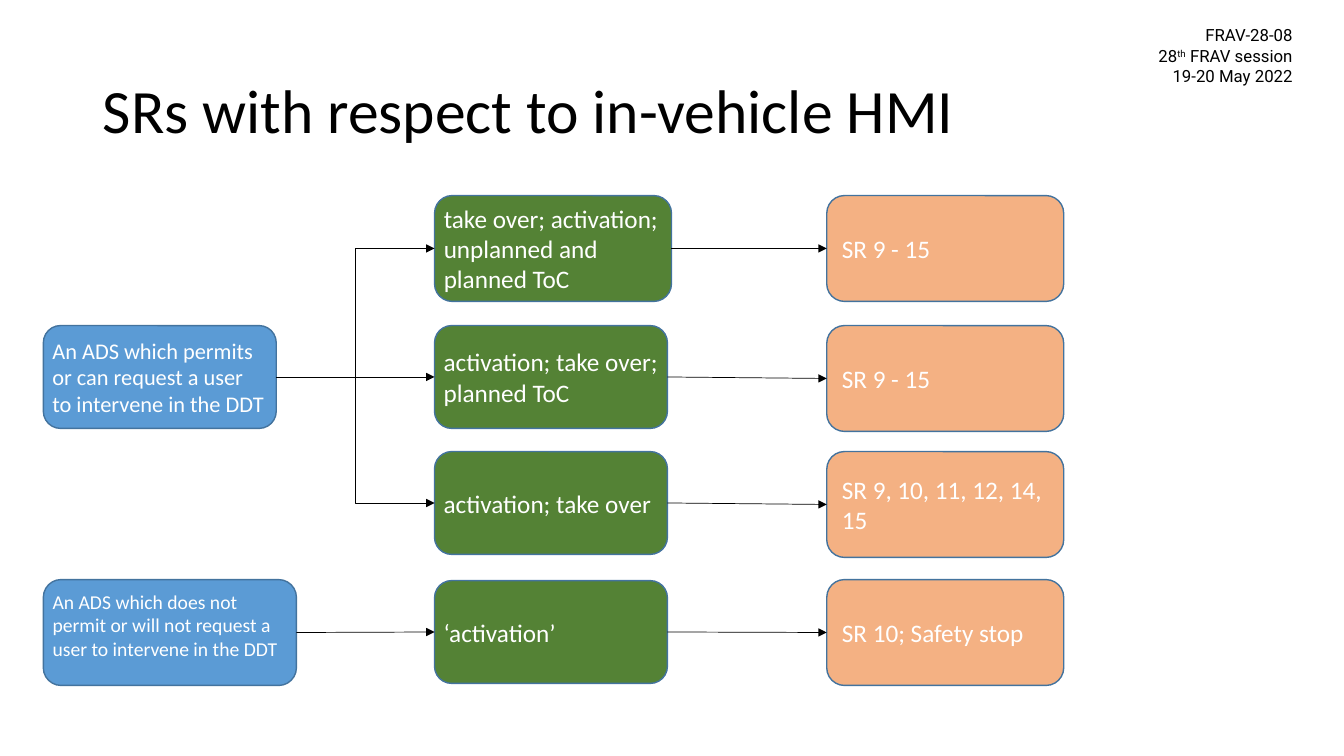
import pptx
import pptx.util
import pptx.dml.color
import pptx.enum.shapes
import pptx.enum.text
import pptx.oxml.ns
from dataclasses import dataclass
from lxml import etree

Inches, Pt = pptx.util.Inches, pptx.util.Pt
Align, Anchor = pptx.enum.text.PP_ALIGN, pptx.enum.text.MSO_ANCHOR
Fit = pptx.enum.text.MSO_AUTO_SIZE
Link = pptx.enum.shapes.MSO_CONNECTOR
LEFT, RIGHT = 1, 3


@dataclass(frozen=True)
class Theme:
    blue: str = "5B9BD5"
    green: str = "548235"
    orange: str = "F4B183"
    edge: str = "43739E"
    ink: str = "000000"
    white: str = "FFFFFF"
    font: str = "Calibri"
    label: str = "Roboto"
    title: int = 44
    body: int = 18
    cause: int = 16
    small: int = 14
    note: int = 12


THEME = Theme()


def rgb(code):
    return pptx.dml.color.RGBColor.from_string(code)


def add_run(para, text, size, color, font=THEME.font):
    run = para.add_run()
    run.text = text
    run.font.size = Pt(size)
    run.font.name = font
    run.font.color.rgb = rgb(color)
    return run


def place(shape, box):
    shape.left, shape.top, shape.width, shape.height = map(Inches, box)


def add_title(slide, box, text):
    title = slide.shapes.title
    place(title, box)
    frame = title.text_frame
    frame.auto_size = Fit.NONE
    frame.vertical_anchor = Anchor.MIDDLE
    para = frame.paragraphs[0]
    para.alignment = Align.LEFT
    para.line_spacing = 0.9
    add_run(para, text, THEME.title, THEME.ink)


def add_note(slide, box, lines):
    frame = slide.shapes.add_textbox(*map(Inches, box)).text_frame
    frame.word_wrap = False
    frame.auto_size = Fit.SHAPE_TO_FIT_TEXT
    for i, parts in enumerate(lines):
        para = frame.add_paragraph() if i else frame.paragraphs[0]
        para.alignment = Align.RIGHT
        for text, base in parts:
            run = add_run(para, text, THEME.note, THEME.ink, THEME.label)
            if base:
                run.font._element.set("baseline", str(base * 1000))


def add_node(slide, box, text, fill, size=THEME.body, inset=0.04,
             anchor=Anchor.MIDDLE):
    kind = pptx.enum.shapes.MSO_SHAPE.ROUNDED_RECTANGLE
    node = slide.shapes.add_shape(kind, *map(Inches, box))
    node.shadow.inherit = False
    node.fill.solid()
    node.fill.fore_color.rgb = rgb(fill)
    node.line.color.rgb = rgb(THEME.edge)
    node.line.width = Pt(1)
    frame = node.text_frame
    frame.word_wrap = True
    frame.vertical_anchor = anchor
    frame.margin_left = frame.margin_right = Inches(inset)
    frame.margin_top = frame.margin_bottom = Inches(0.05)
    para = frame.paragraphs[0]
    para.alignment = Align.LEFT
    add_run(para, text, size, THEME.white)
    return node


def add_arrow(slide, start, end, kind=Link.STRAIGHT):
    arrow = slide.shapes.add_connector(kind, 0, 0, 0, 0)
    arrow.begin_connect(start, RIGHT)
    arrow.end_connect(end, LEFT)
    arrow.line.color.rgb = rgb(THEME.ink)
    arrow.line.width = Pt(0.5)
    qn = pptx.oxml.ns.qn
    props = arrow._element.spPr
    etree.SubElement(props.find(qn("a:ln")), qn("a:tailEnd"), type="triangle")
    etree.SubElement(props, qn("a:effectLst"))


def add_flow(slide, box):
    x, y, w, h = box
    mid, last = x + 3.88, x + w - 2.35
    wide, tall = 2.35, 1.05
    slim, low = 2.31, 1.02

    # Rows: top offsets, size of the action box, action and requirement
    rows = [
        (0, 0, wide, tall, "take over; activation; unplanned and planned ToC",
         "SR 9 - 15"),
        (1.29, 1.29, slim, low, "activation; take over; planned ToC",
         "SR 9 - 15"),
        (2.54, 2.54, slim, low, "activation; take over",
         "SR 9, 10, 11, 12, 14, 15"),
        (3.82, 3.81, slim, low, "‘activation’", "SR 10; Safety stop"),
    ]
    acts = []
    for top, goal, wid, high, act, need in rows:
        left = add_node(slide, (mid, y + top, wid, high), act, THEME.green)
        right = add_node(slide, (last, y + goal, wide, tall), need,
                         THEME.orange, inset=0.1)
        add_arrow(slide, left, right)
        acts.append(left)

    # System types on the left
    asks = add_node(
        slide, (x, y + 1.29, slim, low),
        "An ADS which permits or can request a user to intervene in the DDT",
        THEME.blue, THEME.cause)
    never = add_node(
        slide, (x, y + h - tall, 2.51, tall),
        "An ADS which does not permit or will not request a user "
        "to intervene in the DDT",
        THEME.blue, THEME.small, anchor=Anchor.TOP)

    # Links from system types to actions
    for act, kind in zip(acts, (Link.ELBOW, Link.STRAIGHT, Link.ELBOW)):
        add_arrow(slide, asks, act, kind)
    add_arrow(slide, never, acts[-1])


def main():
    deck = pptx.Presentation()
    deck.slide_width, deck.slide_height = Inches(13.33), Inches(7.5)
    slide = deck.slides.add_slide(deck.slide_layouts[5])
    add_title(slide, (0.92, 0.4, 11.5, 1.45),
              "SRs with respect to in-vehicle HMI")
    add_flow(slide, (0.43, 1.94, 10.12, 4.86))
    add_note(slide, (11.35, 0.2, 1.57, 0.71), [
        [("FRAV-28-08", 0)],
        [("28", 0), ("th", 30), (" FRAV session", 0)],
        [("19-20 May 2022", 0)],
    ])
    deck.save("out.pptx")


if __name__ == "__main__":
    main()
